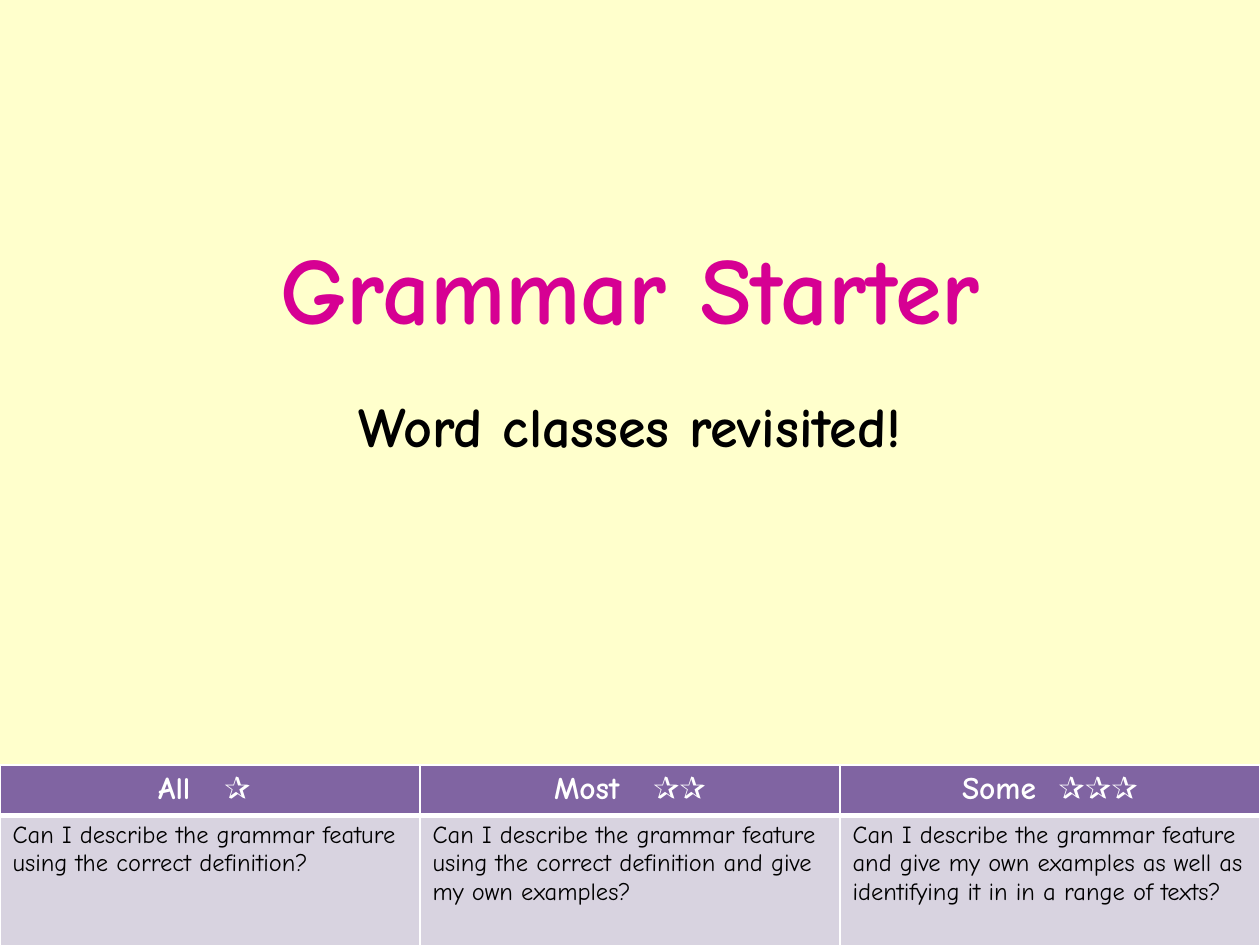
"""Build a grammar starter title slide with a table of graded objectives."""
from lxml import etree
from pptx import Presentation
from pptx.dml.color import RGBColor
from pptx.enum.text import MSO_ANCHOR, PP_ALIGN
from pptx.oxml.ns import qn
from pptx.util import Cm, Pt

CENTER, LEFT = PP_ALIGN.CENTER, PP_ALIGN.LEFT
TOP, MIDDLE = MSO_ANCHOR.TOP, MSO_ANCHOR.MIDDLE
FONT = "Comic Neue"
WIDTH, HEIGHT = 25.4, 19.05

TITLE = "Grammar Starter"
SUBTITLE = "Word classes revisited!"
OBJECTIVES = [
    ("All   ✰ ", "Can I describe the grammar feature using the correct definition?"),
    ("Most   ✰✰", "Can I describe the grammar feature using the correct definition "
                  "and give my own examples?"),
    ("Some  ✰✰✰", "Can I describe the grammar feature and give my own examples "
                  "as well as identifying it in in a range of texts?"),
]
ROW_HEIGHTS = [0.94, 2.62]
ROW_STYLES = [
    dict(fill="8064A2", borders=dict(L=1, R=1, T=1, B=3),
         text=dict(size=18, color="FFFFFF", bold=True, align=CENTER)),
    dict(fill="D8D3E0", borders=dict(L=1, R=1, T=3, B=1),
         text=dict(size=14, color="000000", bold=False, align=LEFT)),
]


def rgb(value):
    return RGBColor.from_string(value)


def write(tf, text, size, color, bold=True, align=CENTER, anchor=TOP, before=0):
    tf.word_wrap = True
    tf.vertical_anchor = anchor
    p = tf.paragraphs[0]
    p.alignment = align
    p.space_before = Pt(before)
    r = p.add_run()
    r.text = text
    r.font.name, r.font.size, r.font.bold = FONT, Pt(size), bold
    r.font.color.rgb = rgb(color)


def set_borders(cell, widths, color="FFFFFF"):
    tc_pr = cell._tc.get_or_add_tcPr()
    for side, width in widths.items():
        ln = etree.SubElement(tc_pr, qn(f"a:ln{side}"), w=str(Pt(width)))
        fill = etree.SubElement(ln, qn("a:solidFill"))
        etree.SubElement(fill, qn("a:srgbClr"), val=color)


def add_objectives(s):
    top = 15.42
    table = s.shapes.add_table(len(ROW_STYLES), len(OBJECTIVES), 0, Cm(top),
                               Cm(WIDTH), Cm(sum(ROW_HEIGHTS))).table
    for row, height in zip(table.rows, ROW_HEIGHTS):
        row.height = Cm(height)
    for col, texts in enumerate(OBJECTIVES):
        for row, (text, style) in enumerate(zip(texts, ROW_STYLES)):
            cell = table.cell(row, col)
            write(cell.text_frame, text, **style["text"])
            set_borders(cell, style["borders"])
            cell.fill.solid()
            cell.fill.fore_color.rgb = rgb(style["fill"])


def main():
    prs = Presentation()
    prs.slide_width, prs.slide_height = Cm(WIDTH), Cm(HEIGHT)
    s = prs.slides.add_slide(prs.slide_layouts[5])
    s.background.fill.solid()
    s.background.fill.fore_color.rgb = rgb("FFFFCC")

    title = s.shapes.title
    title.left, title.top, title.width, title.height = Cm(1.9), Cm(3.73), Cm(21.6), Cm(4.09)
    write(title.text_frame, TITLE, size=54, color="D60093", anchor=MIDDLE)

    subtitle = s.shapes.add_textbox(0, Cm(7.77), Cm(WIDTH), Cm(4.88))
    write(subtitle.text_frame, SUBTITLE, size=32, color="000000", before=6.4)

    add_objectives(s)
    prs.save("out.pptx")


if __name__ == "__main__":
    main()
